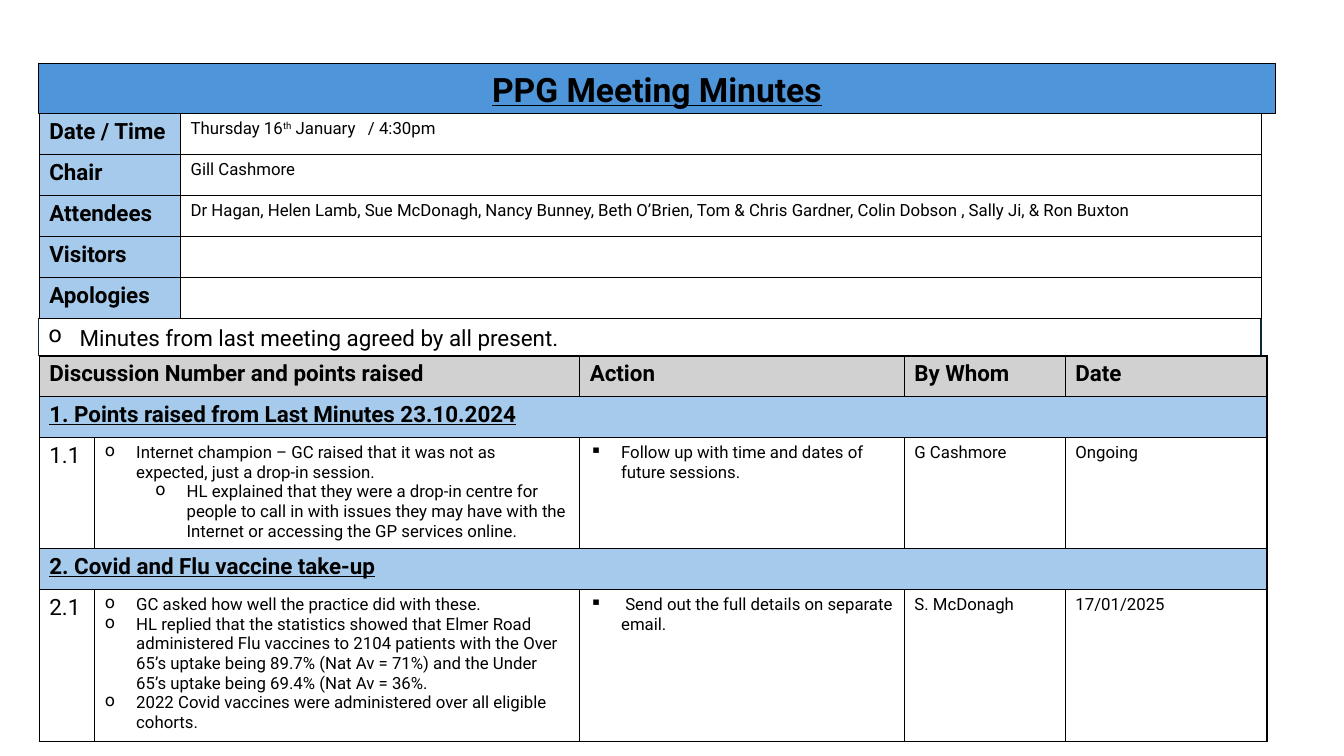
from lxml import etree
from pptx import Presentation
from pptx.dml.color import RGBColor
from pptx.enum.shapes import MSO_SHAPE
from pptx.enum.text import MSO_ANCHOR, PP_ALIGN
from pptx.oxml.ns import qn
from pptx.util import Cm, Pt

RECTANGLE = MSO_SHAPE.RECTANGLE
MIDDLE = MSO_ANCHOR.MIDDLE
LEFT, CENTER = PP_ALIGN.LEFT, PP_ALIGN.CENTER

COLORS = {name: RGBColor.from_string(value) for name, value in {
    "black": "000000", "title": "4E95D9", "label": "A6CAEC",
    "header": "D1D1D1", "agreed": "092A39"}.items()}
FONT = "Roboto"
ROW = 1.03
HANG = 0.79


def write(frame, lines, size, bold=False, underline=False, bullet=None):
    """Fill a text frame; each line is (text, level)."""
    frame.text = "\n".join(text for text, level in lines)
    for para, (text, level) in zip(frame.paragraphs, lines):
        para.alignment = LEFT
        para.level = level
        if bullet:
            properties = para._p.get_or_add_pPr()
            properties.set("marL", str(Cm(HANG + 1.27 * level)))
            properties.set("indent", str(-Cm(HANG)))
            etree.SubElement(properties, qn("a:buChar")).set("char", bullet)
        for span in para.runs:
            span.font.name = FONT
            span.font.size = Pt(size)
            span.font.bold = bold
            span.font.underline = underline
            span.font.color.rgb = COLORS["black"]


def make_table(top, widths, heights, line_width):
    """Add a plain table with black borders around every cell."""
    frame = page.shapes.add_table(len(heights), len(widths), Cm(0.99), Cm(top),
                                  Cm(sum(widths)), Cm(sum(heights)))
    table = frame.table
    table.first_row = table.horz_banding = False
    for column, width in zip(table.columns, widths):
        column.width = Cm(width)
    for row, height in zip(table.rows, heights):
        row.height = Cm(height)
    for cell in table.iter_cells():
        properties = cell._tc.get_or_add_tcPr()
        for side in ("lnL", "lnR", "lnT", "lnB"):
            border = etree.SubElement(properties, qn("a:" + side), w=str(Pt(line_width)))
            fill = etree.SubElement(border, qn("a:solidFill"))
            etree.SubElement(fill, qn("a:srgbClr"), val=str(COLORS["black"]))
        cell.fill.background()
    return table


deck = Presentation()
deck.slide_width, deck.slide_height = Cm(33.87), Cm(19.05)
page = deck.slides.add_slide(deck.slide_layouts[6])

# Title bar and agreement line
bars = []
for top, width, height, line in ((1.6, 31.17, 1.27, "black"), (8.03, 30.81, 0.94, "agreed")):
    box = page.shapes.add_shape(RECTANGLE, Cm(0.97), Cm(top), Cm(width), Cm(height))
    box.shadow.inherit = False
    box.fill.background()
    box.line.color.rgb = COLORS[line]
    box.line.width = Pt(0.75)
    box.text_frame.word_wrap = True
    box.text_frame.vertical_anchor = MIDDLE
    bars.append(box)
title, agreed = bars
title.fill.solid()
title.fill.fore_color.rgb = COLORS["title"]
write(title.text_frame, [("PPG Meeting Minutes", 0)], 24, bold=True, underline=True)
title.text_frame.paragraphs[0].alignment = CENTER
write(agreed.text_frame, [("Minutes from last meeting agreed by all present.", 0)], 16, bullet="o")

# Meeting details
details = [
    ("Date / Time", "Thursday 16"),
    ("Chair", "Gill Cashmore"),
    ("Attendees", "Dr Hagan, Helen Lamb, Sue McDonagh, Nancy Bunney, Beth O’Brien, "
                  "Tom & Chris Gardner, Colin Dobson , Sally Ji, & Ron Buxton"),
    ("Visitors", ""),
    ("Apologies", ""),
]
detail_table = make_table(2.87, [3.56, 27.25], [ROW] * len(details), 0.75)
for row, (label, value) in enumerate(details):
    label_cell, value_cell = detail_table.cell(row, 0), detail_table.cell(row, 1)
    label_cell.fill.solid()
    label_cell.fill.fore_color.rgb = COLORS["label"]
    write(label_cell.text_frame, [(label, 0)], 16, bold=True)
    write(value_cell.text_frame, [(value, 0)], 12)

# Rest of the date, with a raised ordinal
date_para = detail_table.cell(0, 1).text_frame.paragraphs[0]
for text, baseline in (("th", 30000), (" January   / 4:30pm", 0)):
    span = date_para.add_run()
    span.text = text
    span.font.name = FONT
    span.font.size = Pt(12)
    span.font.color.rgb = COLORS["black"]
    span._r.get_or_add_rPr().set("baseline", str(baseline))

# Discussion points
minutes = make_table(8.97, [1.4, 12.22, 8.18, 4.06, 5.08], [ROW, ROW, 2.8, ROW, 3.82], 1)
minutes.cell(0, 0).merge(minutes.cell(0, 1))
for column, heading in ((0, "Discussion Number and points raised"), (2, "Action"),
                        (3, "By Whom"), (4, "Date")):
    cell = minutes.cell(0, column)
    cell.fill.solid()
    cell.fill.fore_color.rgb = COLORS["header"]
    write(cell.text_frame, [(heading, 0)], 16, bold=True)

topics = [
    ("1. Points raised from Last Minutes 23.10.2024", "1.1",
     [("Internet champion – GC raised that it was not as expected, just a drop-in session.", 0),
      ("HL explained that they were a drop-in centre for people to call in with issues "
       "they may have with the Internet or accessing the GP services online.", 1)],
     "Follow up with time and dates of future sessions.", "G Cashmore", "Ongoing"),
    ("2. Covid and Flu vaccine take-up", "2.1",
     [("GC asked how well the practice did with these.", 0),
      ("HL replied that the statistics showed that Elmer Road administered Flu vaccines to "
       "2104 patients with the Over 65’s uptake being 89.7% (Nat Av = 71%) and the Under "
       "65’s uptake being 69.4% (Nat Av = 36%.", 0),
      ("2022 Covid vaccines were administered over all eligible cohorts.", 0)],
     " Send out the full details on separate email.", "S. McDonagh", "17/01/2025"),
]
for index, (topic, number, points, action, person, date) in enumerate(topics):
    row = 1 + 2 * index
    band = minutes.cell(row, 0)
    band.merge(minutes.cell(row, 4))
    band.fill.solid()
    band.fill.fore_color.rgb = COLORS["label"]
    write(band.text_frame, [(topic, 0)], 16, bold=True, underline=True)
    frames = [minutes.cell(row + 1, column).text_frame for column in range(5)]
    write(frames[0], [(number, 0)], 16)
    write(frames[1], points, 12, bullet="o")
    write(frames[2], [(action, 0)], 12, bullet="▪")
    write(frames[3], [(person, 0)], 12)
    write(frames[4], [(date, 0)], 12)

deck.save("out.pptx")
